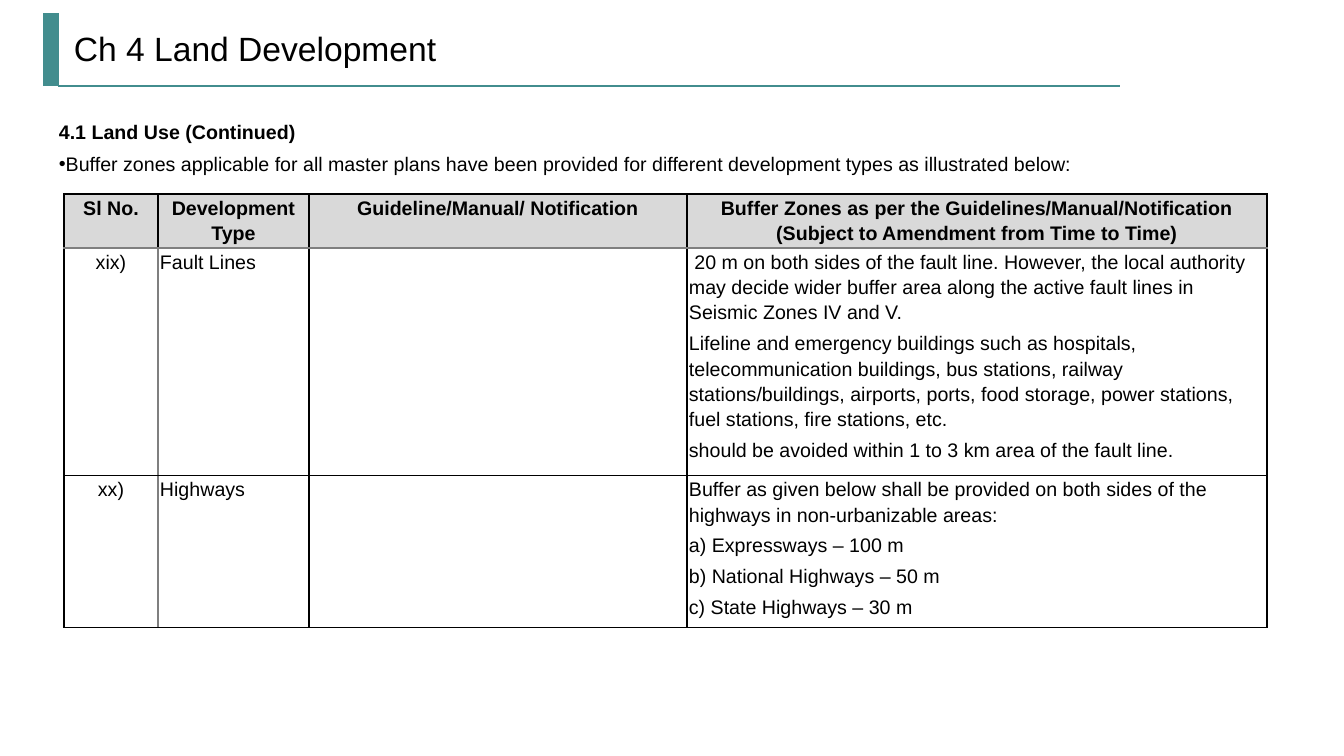
from dataclasses import dataclass

import lxml.etree
import pptx
import pptx.dml.color
import pptx.enum.shapes
import pptx.enum.text
import pptx.oxml.ns
import pptx.util

EMU_PER_PX = 914400 / 100.8
ALIGN = pptx.enum.text.PP_ALIGN
ANCHOR = pptx.enum.text.MSO_ANCHOR


@dataclass(frozen=True)
class Theme:
    font: str = "Arial"
    ink: str = "000000"
    accent: str = "428D8E"
    grid: str = "7F7F7F"
    header: str = "D9D9D9"
    paper: str = "FFFFFF"
    title_size: int = 24
    body_size: int = 14


@dataclass(frozen=True)
class Rule:
    start: tuple[int, int]
    end: tuple[int, int]
    weight: float


@dataclass(frozen=True)
class BufferZone:
    number: str
    development: str
    guideline: str
    buffers: tuple[str, ...]
    height: int


THEME = Theme()
RULES = (
    Rule((58, 86), (1120, 86), 1.5),
    Rule((51, 86), (51, 13), 12),
)
COLUMN_WIDTHS = (94, 151, 378, 580)
HEADER = BufferZone(
    "Sl No.", "Development Type", "Guideline/Manual/ Notification",
    ("Buffer Zones as per the Guidelines/Manual/Notification "
     "(Subject to Amendment from Time to Time)",), 54,
)
ZONES = (
    BufferZone("xix)", "Fault Lines", "", (
        " 20 m on both sides of the fault line. However, the local authority may decide "
        "wider buffer area along the active fault lines in Seismic Zones IV and V.",
        "Lifeline and emergency buildings such as hospitals, telecommunication buildings, "
        "bus stations, railway stations/buildings, airports, ports, food storage, "
        "power stations, fuel stations, fire stations, etc.",
        "should be avoided within 1 to 3 km area of the fault line.",
    ), 227),
    BufferZone("xx)", "Highways", "", (
        "Buffer as given below shall be provided on both sides of the highways "
        "in non-urbanizable areas:",
        "a) Expressways – 100 m",
        "b) National Highways – 50 m",
        "c) State Highways – 30 m",
    ), 152),
)


def px(length: int) -> int:
    return round(length * EMU_PER_PX)


def color(value: str) -> pptx.dml.color.RGBColor:
    return pptx.dml.color.RGBColor.from_string(value)


def add_span(para, text: str, size: int, bold: bool = False) -> None:
    span = para.add_run()
    span.text = text
    span.font.name = THEME.font
    span.font.size = pptx.util.Pt(size)
    span.font.bold = bold
    span.font.color.rgb = color(THEME.ink)


def add_child(parent, tag: str, **attributes: str):
    return lxml.etree.SubElement(parent, pptx.oxml.ns.qn(tag), attributes)


def draw_rule(page, rule: Rule) -> None:
    line = page.shapes.add_connector(
        pptx.enum.shapes.MSO_CONNECTOR.STRAIGHT, *map(px, rule.start + rule.end))
    line.line.color.rgb = color(THEME.accent)
    line.line.width = pptx.util.Pt(rule.weight)
    add_child(line._element.spPr, "a:effectLst")


def add_box(page, left: int, top: int, width: int, height: int):
    box = page.shapes.add_textbox(px(left), px(top), px(width), px(height))
    box.text_frame.word_wrap = True
    return box.text_frame


def draw_title(page) -> None:
    frame = add_box(page, 64, 21, 1123, 59)
    frame.vertical_anchor = ANCHOR.MIDDLE
    para = frame.paragraphs[0]
    para.line_spacing = 0.9
    add_span(para, "Ch 4 Land Development", THEME.title_size)


def draw_introduction(page) -> None:
    frame = add_box(page, 49, 115, 1218, 67)
    add_span(frame.paragraphs[0], "4.1 Land Use (Continued)", THEME.body_size, True)
    para = frame.add_paragraph()
    para.space_before = para.space_after = pptx.util.Pt(6)
    properties = para._p.get_or_add_pPr()
    properties.set("marL", "0")
    properties.set("indent", str(px(-31)))
    add_child(properties, "a:buFont", typeface=THEME.font)
    add_child(properties, "a:buChar", char="•")
    add_span(para, "Buffer zones applicable for all master plans have been provided for "
             "different development types as illustrated below:", THEME.body_size)


def set_borders(cell, row: int, column: int) -> None:
    gray_edges = {
        "a:lnL": row > 0 and column == 1,
        "a:lnR": row > 0 and column == 0,
        "a:lnT": row == 1,
        "a:lnB": row == 0,
    }
    properties = cell._tc.get_or_add_tcPr()
    for position, (tag, gray) in enumerate(gray_edges.items()):
        edge = add_child(properties, tag, w=str(pptx.util.Pt(1)))
        fill = add_child(edge, "a:solidFill")
        add_child(fill, "a:srgbClr", val=THEME.grid if gray else THEME.ink)
        properties.insert(position, edge)


def fill_cell(cell, texts: tuple[str, ...], row: int, column: int) -> None:
    heading = row == 0
    cell.margin_left = cell.margin_right = px(2)
    cell.margin_top = cell.margin_bottom = 0
    cell.vertical_anchor = ANCHOR.TOP
    cell.fill.solid()
    cell.fill.fore_color.rgb = color(THEME.header if heading else THEME.paper)
    set_borders(cell, row, column)
    for index, text in enumerate(texts):
        frame = cell.text_frame
        para = frame.add_paragraph() if index else frame.paragraphs[0]
        para.alignment = ALIGN.CENTER if heading or column == 0 else ALIGN.LEFT
        para.line_spacing = 1.15
        para.space_before = para.space_after = pptx.util.Pt(2)
        if text:
            add_span(para, text, THEME.body_size, heading)


def draw_table(page) -> None:
    zones = (HEADER, *ZONES)
    table = page.shapes.add_table(
        len(zones), len(COLUMN_WIDTHS), px(64), px(194),
        px(sum(COLUMN_WIDTHS)), px(sum(zone.height for zone in zones))).table
    table.first_row = table.horz_banding = False
    for column, width in zip(table.columns, COLUMN_WIDTHS):
        column.width = px(width)
    for row, zone in enumerate(zones):
        table.rows[row].height = px(zone.height)
        contents = ((zone.number,), (zone.development,), (zone.guideline,), zone.buffers)
        for column, texts in enumerate(contents):
            fill_cell(table.cell(row, column), texts, row, column)


def main() -> None:
    deck = pptx.Presentation()
    deck.slide_width, deck.slide_height = px(1344), px(756)
    page = deck.slides.add_slide(deck.slide_layouts[6])
    for rule in RULES:
        draw_rule(page, rule)
    draw_title(page)
    draw_introduction(page)
    draw_table(page)
    deck.save("out.pptx")


if __name__ == "__main__":
    main()
